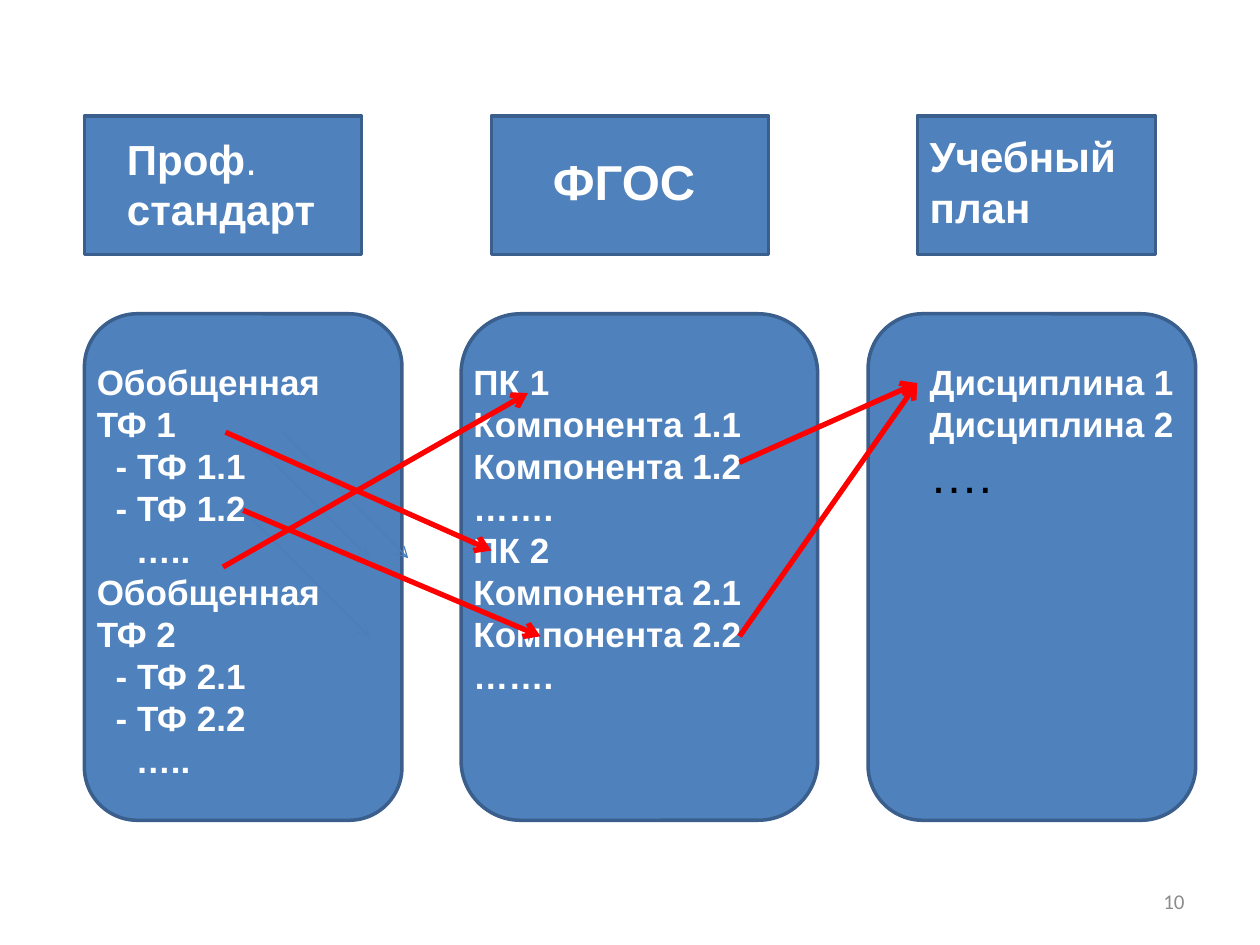
from dataclasses import dataclass
from lxml.etree import SubElement
from pptx import Presentation
from pptx.dml.color import RGBColor as Color
from pptx.enum.shapes import MSO_CONNECTOR as Connector, MSO_SHAPE as Shape
from pptx.enum.text import MSO_ANCHOR as Anchor, PP_ALIGN as Align
from pptx.oxml.ns import qn
from pptx.util import Inches, Pt


@dataclass(frozen=True)
class Theme:
    panel: str = "4F81BD"
    border: str = "3A5F8C"
    faint: str = "4B7EBC"
    link: str = "FF0000"
    light: str = "FFFFFF"
    dark: str = "000000"
    muted: str = "8C8C8C"
    font: str = "Arial"
    number_font: str = "Calibri"
    number_size: int = 12
    body_size: int = 20
    heading_size: int = 24
    large_size: int = 28


THEME = Theme()


def add_run(paragraph, text, size=THEME.body_size, color=THEME.light, bold=True, font=THEME.font):
    run = paragraph.add_run()
    run.text = text
    run.font.name = font
    run.font.size = Pt(size)
    run.font.bold = bold
    run.font.color.rgb = Color.from_string(color)


class SlideBuilder:
    def __init__(self, slide, theme):
        self.slide = slide
        self.theme = theme

    def panel(self, kind, left, top, width, height):
        shape = self.slide.shapes.add_shape(
            kind, Inches(left), Inches(top), Inches(width), Inches(height))
        shape.shadow.inherit = False
        shape.fill.solid()
        shape.fill.fore_color.rgb = Color.from_string(self.theme.panel)
        shape.line.color.rgb = Color.from_string(self.theme.border)
        shape.line.width = Pt(2)

    def text(self, left, top, width, height, lines, align=Align.LEFT, anchor=Anchor.TOP):
        box = self.slide.shapes.add_textbox(
            Inches(left), Inches(top), Inches(width), Inches(height))
        frame = box.text_frame
        frame.word_wrap = True
        frame.vertical_anchor = anchor
        for index, (indent, runs) in enumerate(lines):
            paragraph = frame.add_paragraph() if index else frame.paragraphs[0]
            paragraph.alignment = align
            if indent:
                paragraph._p.get_or_add_pPr().set("marL", str(Inches(indent)))
            for text, style in runs:
                add_run(paragraph, text, **style)

    def arrow(self, start, end, color, width):
        connector = self.slide.shapes.add_connector(
            Connector.STRAIGHT, *(Inches(value) for value in (*start, *end)))
        connector.line.color.rgb = Color.from_string(color)
        connector.line.width = Pt(width)
        SubElement(connector.line._get_or_add_ln(), qn("a:tailEnd")).set("type", "arrow")
        SubElement(connector._element.spPr, qn("a:effectLst"))


def line(text, indent=0, **style):
    return indent, [(text, style)]


def functions(number):
    return [line(f"Обобщенная ТФ {number}"),
            line(f"- ТФ {number}.1", 0.15),
            line(f"- ТФ {number}.2", 0.15),
            line("…..", 0.31)]


def competences(number):
    return [line(f"ПК {number}"),
            line(f"Компонента {number}.1"),
            line(f"Компонента {number}.2"),
            line("…….")]


def main():
    presentation = Presentation()
    presentation.slide_width = Inches(10)
    presentation.slide_height = Inches(7.5)
    slide = presentation.slides.add_slide(presentation.slide_layouts[6])
    builder = SlideBuilder(slide, THEME)

    builder.text(7.17, 6.95, 2.33, 0.4,
                 [line("10", size=THEME.number_size, color=THEME.muted, bold=False,
                       font=THEME.number_font)],
                 align=Align.RIGHT, anchor=Anchor.MIDDLE)

    for left, width in ((0.67, 2.2), (3.9, 2.2), (7.28, 1.89)):
        builder.panel(Shape.RECTANGLE, left, 0.92, width, 1.1)
    heading = {"size": THEME.heading_size}
    builder.text(0.91, 1.01, 1.73, 0.91,
                 [(0, [("Проф", heading), (". ", {**heading, "bold": False}),
                       ("стандарт", heading)])])
    builder.text(4.29, 1.15, 1.57, 0.57, [line("ФГОС", size=THEME.large_size)])
    builder.text(7.28, 0.99, 1.73, 0.91, [line("Учебный план", **heading)])

    for left, width in ((0.67, 2.52), (3.66, 2.83), (6.89, 2.6)):
        builder.panel(Shape.ROUNDED_RECTANGLE, left, 2.49, width, 4.02)
    builder.text(0.67, 2.81, 2.2, 3.47, functions(1) + functions(2))
    builder.text(3.66, 2.81, 2.44, 3.13, competences(1) + competences(2))
    builder.text(7.28, 2.81, 2.2, 1.25,
                 [line("Дисциплина 1"), line("Дисциплина 2"),
                  line("….", size=THEME.large_size, color=THEME.dark, bold=False)])

    for left, top in ((1.93, 3.43), (2.24, 3.43), (1.93, 4.05)):
        builder.arrow((left, top), (left + 1, top + 1), THEME.faint, 0.75)
    discipline = (7.28, 3.04)
    for start, end in (((1.79, 3.43), (3.9, 4.37)),
                       ((1.77, 4.5), (4.19, 3.12)),
                       ((1.93, 4.05), (4.29, 5.05)),
                       ((5.87, 3.67), discipline),
                       ((5.87, 5.05), discipline)):
        builder.arrow(start, end, THEME.link, 3)

    presentation.save("out.pptx")


if __name__ == "__main__":
    main()
